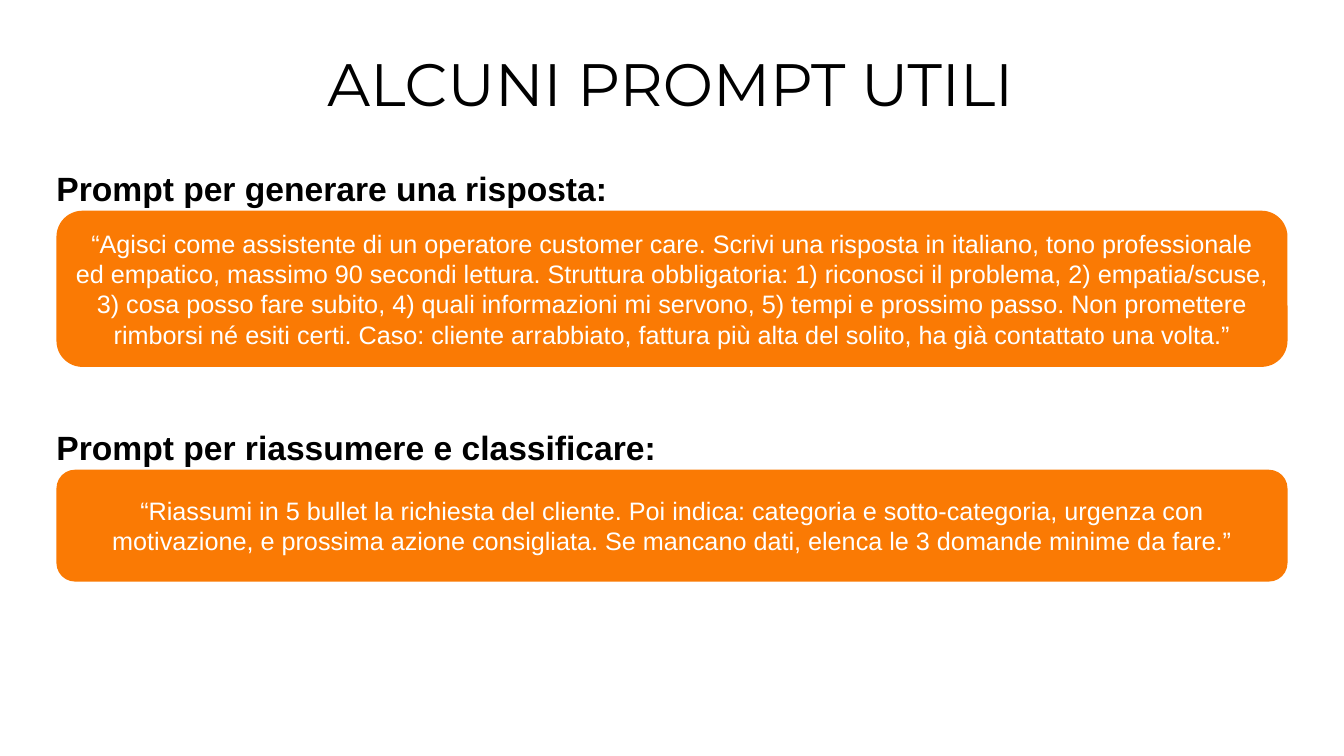
"""Builds the slide of useful customer care prompts."""
import pptx
import pptx.dml.color
import pptx.enum.shapes
import pptx.enum.text
import pptx.util

Inches = pptx.util.Inches
RGB = pptx.dml.color.RGBColor.from_string
ALIGN = pptx.enum.text.PP_ALIGN
ANCHOR = pptx.enum.text.MSO_ANCHOR

TITLE = "ALCUNI PROMPT UTILI"
PROMPTS = [
    {"heading": "Prompt per generare una risposta:", "top": 1.64, "heading_width": 5.63, "box_height": 1.55,
     "text": "“Agisci come assistente di un operatore customer care. Scrivi una risposta in italiano, "
             "tono professionale ed empatico, massimo 90 secondi lettura. Struttura obbligatoria: "
             "1) riconosci il problema, 2) empatia/scuse, 3) cosa posso fare subito, "
             "4) quali informazioni mi servono, 5) tempi e prossimo passo. Non promettere rimborsi "
             "né esiti certi. Caso: cliente arrabbiato, fattura più alta del solito, "
             "ha già contattato una volta.”"},
    {"heading": "Prompt per riassumere e classificare:", "top": 4.21, "heading_width": 6.19, "box_height": 1.11,
     "text": "“Riassumi in 5 bullet la richiesta del cliente. Poi indica: categoria e sotto-categoria, "
             "urgenza con motivazione, e prossima azione consigliata. Se mancano dati, "
             "elenca le 3 domande minime da fare.”"},
]
THEME = {
    "box": "FA7A04",
    "title": {"font": "Montserrat", "size": 42.7, "color": "000000", "bold": False},
    "heading": {"font": "Arial", "size": 24, "color": "000000", "bold": True},
    "prompt": {"font": "Arial", "size": 18, "color": "FFFFFF", "bold": False},
}
LEFT, BOX_WIDTH, HEADING_HEIGHT = 0.56, 12.21, 0.45


def write(sp, text, style, align, anchor):
    tf = sp.text_frame
    tf.text = text
    tf.word_wrap = True
    tf.vertical_anchor = anchor
    p = tf.paragraphs[0]
    p.alignment = align
    font = p.runs[0].font
    font.name = style["font"]
    font.size = pptx.util.Pt(style["size"])
    font.bold = style["bold"]
    font.color.rgb = RGB(style["color"])
    return p


def add_label(s, at, text, style, align, anchor):
    sp = s.shapes.add_textbox(*map(Inches, at))
    tf = sp.text_frame
    tf.margin_left = tf.margin_top = tf.margin_right = tf.margin_bottom = 0
    return write(sp, text, style, align, anchor)


def add_prompt(s, prompt):
    top = prompt["top"]
    box_at = (LEFT, top + HEADING_HEIGHT, BOX_WIDTH, prompt["box_height"])
    sp = s.shapes.add_shape(pptx.enum.shapes.MSO_SHAPE.ROUNDED_RECTANGLE, *map(Inches, box_at))
    sp.shadow.inherit = False
    sp.fill.solid()
    sp.fill.fore_color.rgb = RGB(THEME["box"])
    sp.line.fill.background()
    write(sp, prompt["text"], THEME["prompt"], ALIGN.CENTER, ANCHOR.MIDDLE)
    heading_at = (LEFT, top, prompt["heading_width"], HEADING_HEIGHT)
    add_label(s, heading_at, prompt["heading"], THEME["heading"], ALIGN.LEFT, ANCHOR.MIDDLE)


def main():
    prs = pptx.Presentation()
    prs.slide_width, prs.slide_height = Inches(13.33), Inches(7.5)
    s = prs.slides.add_slide(prs.slide_layouts[6])
    p = add_label(s, (0.84, 0.6, 11.62, 0.39), TITLE, THEME["title"], ALIGN.CENTER, ANCHOR.TOP)
    p.line_spacing = 0.8
    for prompt in PROMPTS:
        add_prompt(s, prompt)
    prs.save("out.pptx")


if __name__ == "__main__":
    main()
